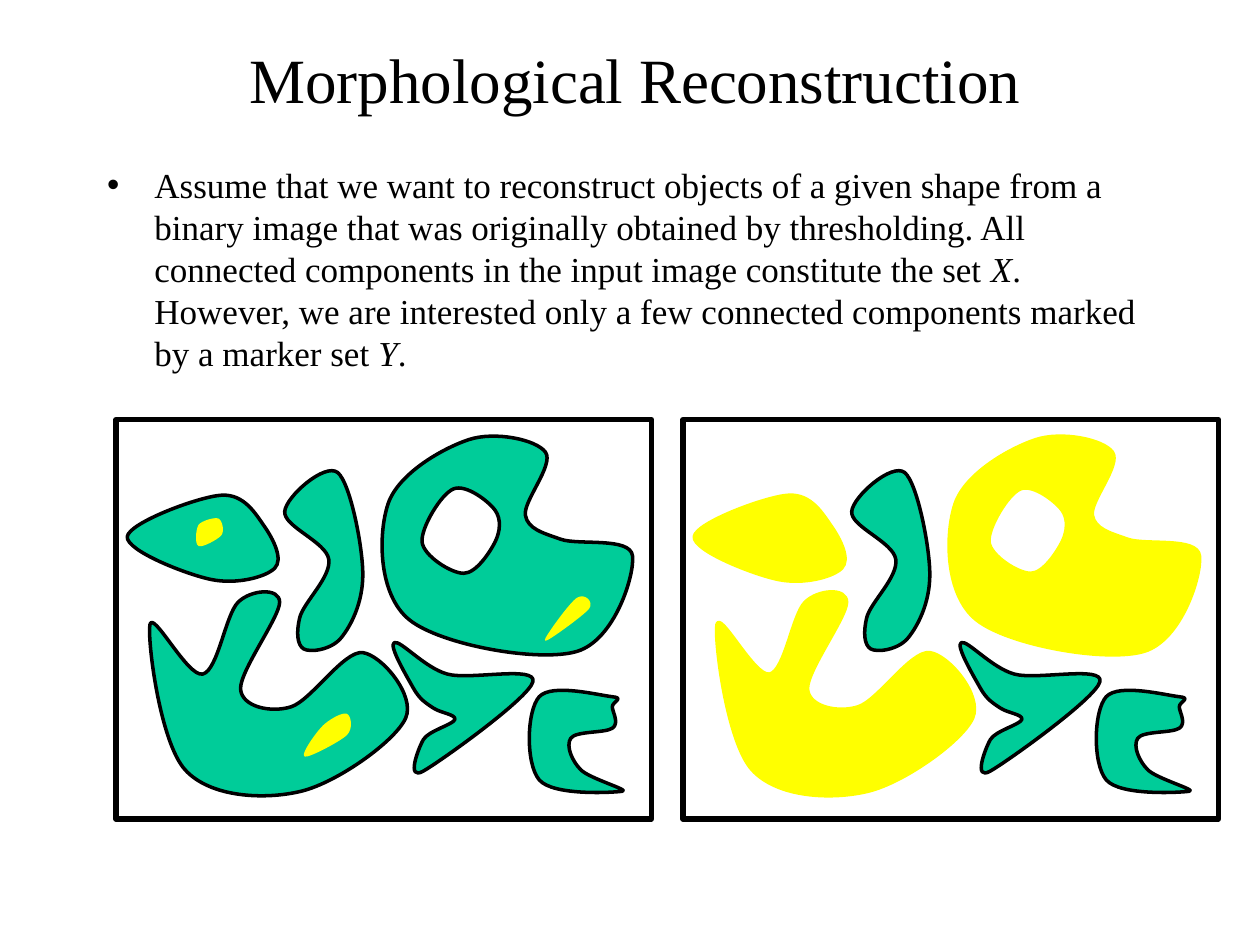
import dataclasses
import typing
import pptx
import pptx.dml.color
import pptx.enum.shapes
import pptx.enum.text
import pptx.oxml.ns
import pptx.util

UNIT = 9144
COLS, ROWS = 1000, 750
SHIFT = 450
GREEN, GOLD, BLACK, WHITE = "00CC99", "FFFF00", "000000", "FFFFFF"
Points = list[tuple[float, float]]


@dataclasses.dataclass
class Blob:
    knots: Points
    marked: bool = False


BLOBS = [
    Blob([(176, 393), (101, 426), (168, 460), (218, 451), (210, 418)], True),
    Blob([(238, 490), (241, 515), (271, 506), (288, 456), (268, 375), (226, 406),
          (261, 444)]),
    Blob([(372, 349), (308, 400), (325, 492), (458, 517), (502, 441), (445, 428),
          (417, 409), (433, 359)], True),
    Blob([(119, 496), (147, 611), (239, 628), (322, 570), (288, 518), (231, 561),
          (191, 547), (222, 478), (189, 478), (161, 535)], True),
    Blob([(328, 546), (313, 510), (355, 535), (423, 541), (336, 612), (336, 587),
          (361, 571), (344, 562)]),
    Blob([(486, 561), (486, 553), (428, 553), (428, 619), (494, 628), (461, 611),
          (453, 586), (486, 578)]),
]
HOLE = [(335, 430), (368, 455), (393, 430), (393, 405), (360, 388)]
SEEDS = [
    [(242, 600), (258, 575), (275, 567), (275, 583)],
    [(467, 483), (458, 475), (433, 508)],
    [(158, 417), (158, 433), (175, 425), (173, 412)],
]


def tint(code: str) -> pptx.dml.color.RGBColor:
    return pptx.dml.color.RGBColor.from_string(code)


def ink(shape: typing.Any, fill: str | None, line: str, width: float) -> None:
    shape.shadow.inherit = False
    if fill:
        shape.fill.solid()
        shape.fill.fore_color.rgb = tint(fill)
    else:
        shape.fill.background()
    shape.line.color.rgb = tint(line)
    shape.line.width = pptx.util.Pt(width)


def smooth(knots: Points) -> Points:
    count = len(knots)
    slopes = [
        tuple((b - a) / 6 for a, b in zip(knots[i - 1], knots[(i + 1) % count]))
        for i in range(count)
    ]
    points = []
    for i, (x, y) in enumerate(knots):
        j = (i + 1) % count
        end = knots[j]
        points += [(x + slopes[i][0], y + slopes[i][1]),
                   (end[0] - slopes[j][0], end[1] - slopes[j][1]), end]
    return points


def draw_curve(slide: typing.Any, knots: Points, left: int, fill: str,
               line: str, width: float = 2) -> None:
    pen = slide.shapes.build_freeform(*knots[0], scale=UNIT)
    pen.add_line_segments(smooth(knots), close=True)
    shape = pen.convert_to_shape(left * UNIT, 0)
    steps = list(shape.element.iter(pptx.oxml.ns.qn("a:lnTo")))
    for first, *rest in zip(steps[::3], steps[1::3], steps[2::3]):
        for step in rest:
            first.append(step[0])
            step.getparent().remove(step)
        first.tag = pptx.oxml.ns.qn("a:cubicBezTo")
    ink(shape, fill, line, width)


def draw_frame(slide: typing.Any, left: int) -> None:
    kind = pptx.enum.shapes.MSO_SHAPE.RECTANGLE
    box = slide.shapes.add_shape(kind, *(n * UNIT for n in (92 + left, 333, 425, 317)))
    ink(box, None, BLACK, 3)


def place(shape: typing.Any, left: float, top: float, width: float, height: float) -> None:
    shape.left, shape.width = (round(n * COLS) * UNIT for n in (left, width))
    shape.top, shape.height = (round(n * ROWS) * UNIT for n in (top, height))
    shape.text_frame.auto_size = pptx.enum.text.MSO_AUTO_SIZE.NONE


def write(para: typing.Any, text: str, *, size: float, slant: bool = False,
          face: str = "Times New Roman", code: str = BLACK) -> None:
    run = para.add_run()
    run.text = text
    run.font.size = pptx.util.Pt(size)
    run.font.name = face
    run.font.italic = slant
    run.font.color.rgb = tint(code)


def main() -> None:
    deck = pptx.Presentation()
    deck.slide_width, deck.slide_height = COLS * UNIT, ROWS * UNIT
    slide = deck.slides.add_slide(deck.slide_layouts[1])
    title, body = slide.placeholders
    place(title, 0.064, 0.025, 0.88, 0.115)
    write(title.text_frame.paragraphs[0], "Morphological Reconstruction", size=36)
    place(body, 0.075, 1 / 6, 0.85, 4 / 15)
    parts = [
        "Assume that we want to reconstruct objects of a given shape from a binary image "
        "that was originally obtained by thresholding. All connected components in the "
        "input image constitute the set ",
        "X",
        ". However, we are interested only a few connected components marked by a marker set ",
        "Y",
        ".",
    ]
    for rank, part in enumerate(parts):
        write(body.text_frame.paragraphs[0], part, size=20, slant=rank % 2 == 1)

    for left, hit, rim in ((0, GREEN, BLACK), (SHIFT, GOLD, GOLD)):
        for blob in BLOBS:
            fill, line = (hit, rim) if blob.marked else (GREEN, BLACK)
            draw_curve(slide, blob.knots, left, fill, line)
        draw_curve(slide, HOLE, left, WHITE, rim)
        draw_frame(slide, left)
    for seed in SEEDS:
        draw_curve(slide, seed, 0, GOLD, GOLD, 0.75)
    deck.save("out.pptx")


if __name__ == "__main__":
    main()
